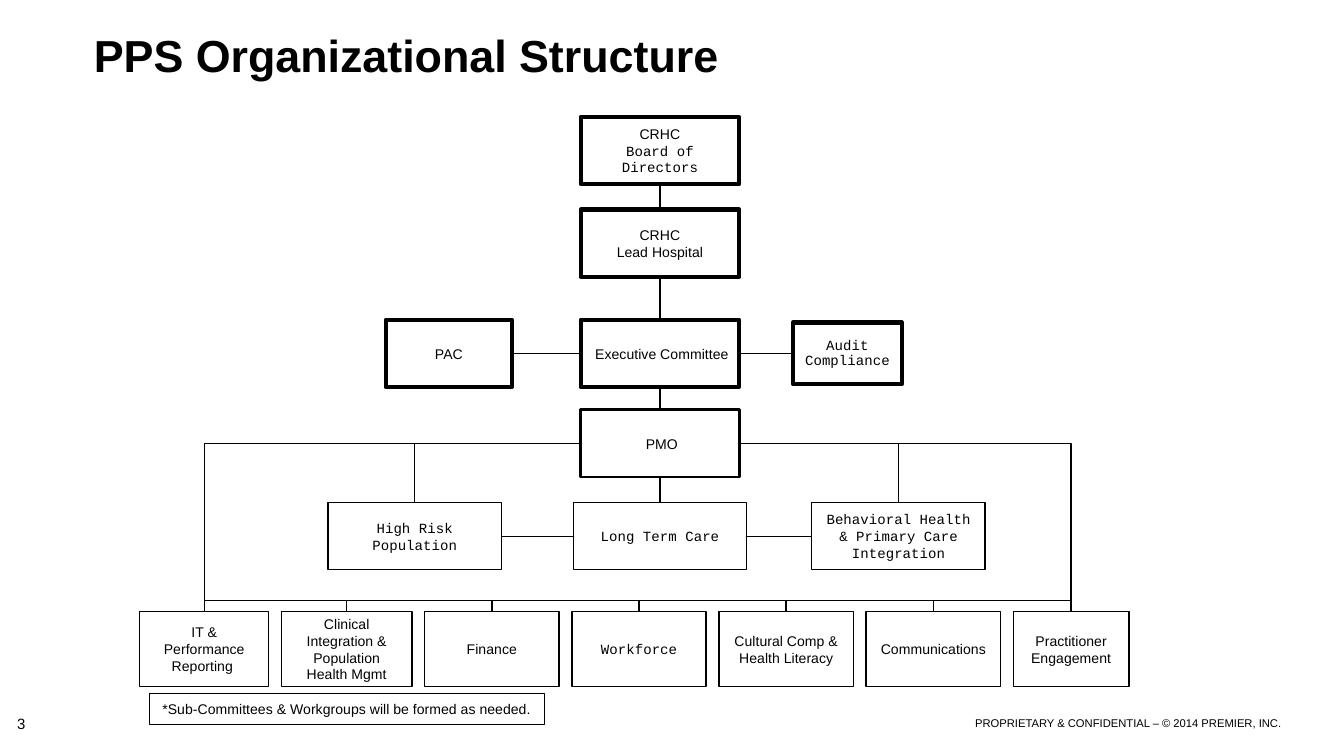
from pptx import Presentation, util as u
from pptx.dml import color
from pptx.enum import shapes, text
from pptx.oxml import parse_xml
from pptx.oxml.ns import nsdecls

COLS, ROWS = 100, 56.25
SANS, MONO = "Arial", "Courier New"
INK, PAPER = "000000", "FFFFFF"
TOP, LEFT, BASE, RIGHT = range(4)

deck = Presentation()
deck.slide_width = u.Inches(10)
deck.slide_height = deck.slide_width * 9 // 16
slide = deck.slides.add_slide(deck.slide_layouts[6])
parts = slide.shapes


def tint(code):
    return color.RGBColor.from_string(code)


def col(n):
    return round(deck.slide_width * n / COLS)


def row(n):
    return round(deck.slide_height * n / ROWS)


def area(x, y, w, h):
    return col(x), row(y), col(w), row(h)


def style(para, size, face=SANS, bold=False, align=text.PP_ALIGN.LEFT):
    para.alignment = align
    para.font.size = u.Pt(size)
    para.font.name = face
    para.font.bold = bold
    para.font.color.rgb = tint(INK)


def label(box, words, size, **look):
    frame = parts.add_textbox(*area(*box)).text_frame
    frame.word_wrap = True
    frame.text = words
    style(frame.paragraphs[0], size, **look)
    return frame


def panel(box, words, weight):
    node = parts.add_shape(shapes.MSO_SHAPE.RECTANGLE, *area(*box))
    node.shadow.inherit = False
    node.fill.solid()
    node.fill.fore_color.rgb = tint(PAPER)
    node.line.color.rgb = tint(INK)
    node.line.width = u.Pt(weight)
    node.text_frame.text = words
    return node


def unit(box, words, weight=0.75, faces=(SANS,), lead=None):
    node = panel(box, words, weight)
    frame = node.text_frame
    frame.word_wrap = True
    frame.vertical_anchor = text.MSO_ANCHOR.MIDDLE
    frame.margin_left = frame.margin_right = col(0.75)
    frame.margin_top = frame.margin_bottom = row(0.4)
    for i, para in enumerate(frame.paragraphs):
        style(para, 7.5, faces[i % len(faces)], align=text.PP_ALIGN.CENTER)
        if lead:
            para.line_spacing = u.Pt(lead)
    return node


def wire(kind, x, y, weight):
    line = parts.add_connector(kind, x, y, x, y)
    line.line.color.rgb = tint(INK)
    line.line.width = u.Pt(weight)
    line._element.spPr.append(parse_xml(f"<a:effectLst {nsdecls('a')}/>"))
    return line


def join(a, side, b, end, weight=0.75):
    line = wire(shapes.MSO_CONNECTOR.STRAIGHT, a.left, a.top, weight)
    line.begin_connect(a, side)
    line.end_connect(b, end)


def bend(x, y, node):
    line = wire(shapes.MSO_CONNECTOR.ELBOW, x, y, 0.75)
    line._element.spPr.prstGeom.set("prst", "bentConnector2")
    line.end_connect(node, TOP)
    return line


def drop(boss, side, node):
    bend(boss.left, boss.top, node).begin_connect(boss, side)


def spine(box):
    x, y, w, h = box
    tall = 5
    board = unit((x, y, w, tall), "CRHC\nBoard of Directors", 2.25, (SANS, MONO))
    lead = unit((x, y + 6.9, w, tall), " CRHC \nLead Hospital", 2.25)
    chief = unit((x, y + 15.1, w, tall), " Executive Committee", 2.25)
    office = unit((x, y + h - tall, w, tall), " PMO", 1.5)
    pac = unit((x - 14.5, y + 15.1, 9.4, tall), "PAC", 2.25)
    audit = unit((x + 15.8, y + 15.3, 8.1, 4.6), "Audit\nCompliance",
                 2.25, (MONO,), 8.2)
    join(board, BASE, lead, TOP, 1)
    join(lead, BASE, chief, TOP, 1)
    join(chief, BASE, office, TOP)
    join(pac, RIGHT, chief, LEFT, 1)
    join(chief, RIGHT, audit, LEFT, 1)
    return office


def teams(box, office):
    x, y, w, h = box
    wide = 12.9
    names = ("High Risk Population", "Long Term Care",
             "Behavioral Health & Primary Care Integration")
    steps = (0, 18.25, w - wide)
    risk, care, health = [unit((x + step, y, wide, h), name, faces=(MONO,))
                          for step, name in zip(steps, names)]
    join(office, BASE, care, TOP)
    join(risk, RIGHT, care, LEFT)
    join(care, RIGHT, health, LEFT)
    drop(office, LEFT, risk)
    drop(office, RIGHT, health)


def groups(box, office):
    x, y, w, h = box
    items = (("IT & Performance Reporting ", 9.6, SANS),
             ("Clinical Integration & Population Health Mgmt", 9.7, SANS),
             ("Finance", 10, SANS),
             ("Workforce", 10, MONO),
             ("Cultural Comp & Health Literacy", 10, SANS),
             ("Communications", 10, SANS),
             ("Practitioner Engagement", 8.6, SANS))
    gap = (w - sum(item[1] for item in items)) / (len(items) - 1)
    nodes = []
    for name, wide, face in items:
        nodes.append(unit((x, y, wide, h), name, faces=(face,)))
        x += wide + gap
    drop(office, LEFT, nodes[0])
    drop(office, RIGHT, nodes[-1])
    for here, there in ((1, 0), (2, 1), (3, 2), (3, 6), (4, 6), (5, 6)):
        far = nodes[there]
        bend(far.left + far.width // 2, row(y - 0.8), nodes[here])


def header(box):
    frame = label(box, "PPS Organizational Structure", 24, bold=True)
    frame.vertical_anchor = text.MSO_ANCHOR.MIDDLE


def footer(box):
    x, y, w, h = box
    label((x, y, 4.2, h), "3", 8)
    label((x + w - 25.3, y + 0.1, 25.3, 2),
          "PROPRIETARY & CONFIDENTIAL – © 2014 PREMIER, INC.", 6,
          align=text.PP_ALIGN.RIGHT)


def note(box):
    words = "*Sub-Committees & Workgroups will be formed as needed."
    frame = panel(box, words, 0.25).text_frame
    frame.word_wrap = False
    style(frame.paragraphs[0], 7.5)


header((6, 1.4, 90, 5.3))
office = spine((43.2, 8.7, 11.8, 26.8))
teams((24.4, 37.4, 48.9, 5), office)
groups((10.4, 45.5, 73.6, 5.6), office)
note((11.1, 51.6, 29.4, 2.3))
footer((0.3, 52.7, 96, 3.5))
deck.save("out.pptx")
